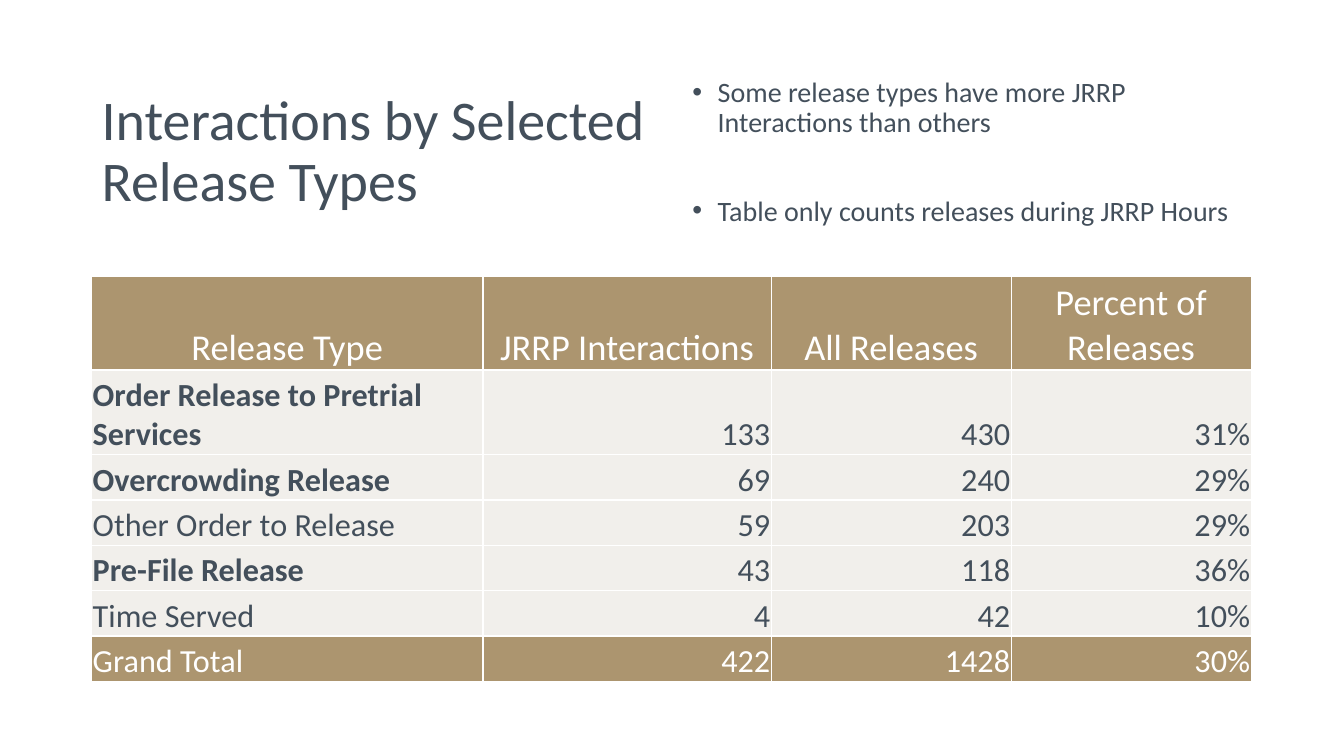
"""Build the slide on interactions by selected release types."""
from lxml import etree
from pptx import Presentation
from pptx import util as u
from pptx.dml.color import RGBColor
from pptx.enum import text
from pptx.oxml.ns import qn

TITLE = "Interactions by Selected Release Types"
BULLETS = [
    ("Some release types have more JRRP Interactions than others", 10),
    ("Table only counts releases during JRRP Hours", 41.6),
]
HEADER = ("Release Type", "JRRP Interactions", "All Releases", "Percent of Releases")
RELEASES = [
    ("Order Release to Pretrial Services", "133", "430", "31%"),
    ("Overcrowding Release", "69", "240", "29%"),
    ("Other Order to Release", "59", "203", "29%"),
    ("Pre-File Release", "43", "118", "36%"),
    ("Time Served", "4", "42", "10%"),
]
TOTAL = ("Grand Total", "422", "1428", "30%")
BOLD_TYPES = {"Order Release to Pretrial Services", "Overcrowding Release", "Pre-File Release"}

SLATE, TAN, PALE, WHITE = "434F5B", "AC956F", "F1EFEB", "FFFFFF"
LEFT, TOP, TABLE_TOP = 0.91, 0.6, 2.74
COL_WIDTHS = [3.88, 2.86, 2.38, 2.38]
ROW_HEIGHTS = [0.93, 0.84] + [0.45] * 5
CELL_FORMAT = {
    "margin_left": u.Inches(0.01),
    "margin_right": u.Inches(0.01),
    "margin_top": u.Inches(0.01),
    "margin_bottom": 0,
    "vertical_anchor": text.MSO_ANCHOR.BOTTOM,
}
BOX_FORMAT = {"word_wrap": True, "vertical_anchor": text.MSO_ANCHOR.MIDDLE}
TABLE_FORMAT = {"first_row": True, "last_row": True, "horz_banding": False}


def color(value):
    return RGBColor.from_string(value)


def apply(target, formats):
    for name, value in formats.items():
        setattr(target, name, value)


def write(p, content, size, hue, bold=False, **formats):
    apply(p, formats)
    r = p.add_run()
    r.text = content
    apply(r.font, {"name": "Calibri", "size": u.Pt(size), "bold": bold})
    r.font.color.rgb = color(hue)


def add_box(s, left, width):
    sp = s.shapes.add_textbox(*map(u.Inches, (left, TOP, width, 1.83)))
    tf = sp.text_frame
    apply(tf, BOX_FORMAT)
    return tf


def add_bullet(p):
    pPr = p._p.get_or_add_pPr()
    pPr.set("marL", str(u.Inches(0.25)))
    pPr.set("indent", str(u.Inches(-0.25)))
    etree.SubElement(pPr, qn("a:buFont"), typeface="Arial")
    etree.SubElement(pPr, qn("a:buChar"), char="•")


def add_release_table(s):
    rows = [HEADER, *RELEASES, TOTAL]
    sp = s.shapes.add_table(
        len(rows), len(HEADER), u.Inches(LEFT), u.Inches(TABLE_TOP),
        u.Inches(sum(COL_WIDTHS)), u.Inches(sum(ROW_HEIGHTS)))
    table = sp.table
    apply(table, TABLE_FORMAT)
    for column, width in zip(table.columns, COL_WIDTHS):
        column.width = u.Inches(width)
    for row, height, values in zip(table.rows, ROW_HEIGHTS, rows):
        row.height = u.Inches(height)
        is_header = values is HEADER
        is_band = is_header or values is TOTAL
        for i, (cell, value) in enumerate(zip(row.cells, values)):
            apply(cell, CELL_FORMAT)
            cell.fill.solid()
            cell.fill.fore_color.rgb = color(TAN if is_band else PALE)
            align = text.PP_ALIGN.RIGHT if i else text.PP_ALIGN.LEFT
            write(cell.text_frame.paragraphs[0], value, 26 if is_header else 23,
                  WHITE if is_band else SLATE, value in BOLD_TYPES,
                  alignment=text.PP_ALIGN.CENTER if is_header else align)


def main():
    prs = Presentation()
    apply(prs, {"slide_width": u.Inches(13.33), "slide_height": u.Inches(7.5)})
    s = prs.slides.add_slide(prs.slide_layouts[6])
    title = add_box(s, LEFT, 5.65)
    write(title.paragraphs[0], TITLE, 40, SLATE, line_spacing=0.9)
    tf = add_box(s, 6.77, 5.64)
    for i, (content, before) in enumerate(BULLETS):
        p = tf.add_paragraph() if i else tf.paragraphs[0]
        write(p, content, 20, SLATE, line_spacing=0.9, space_before=u.Pt(before))
        add_bullet(p)
    add_release_table(s)
    prs.save("out.pptx")


if __name__ == "__main__":
    main()
